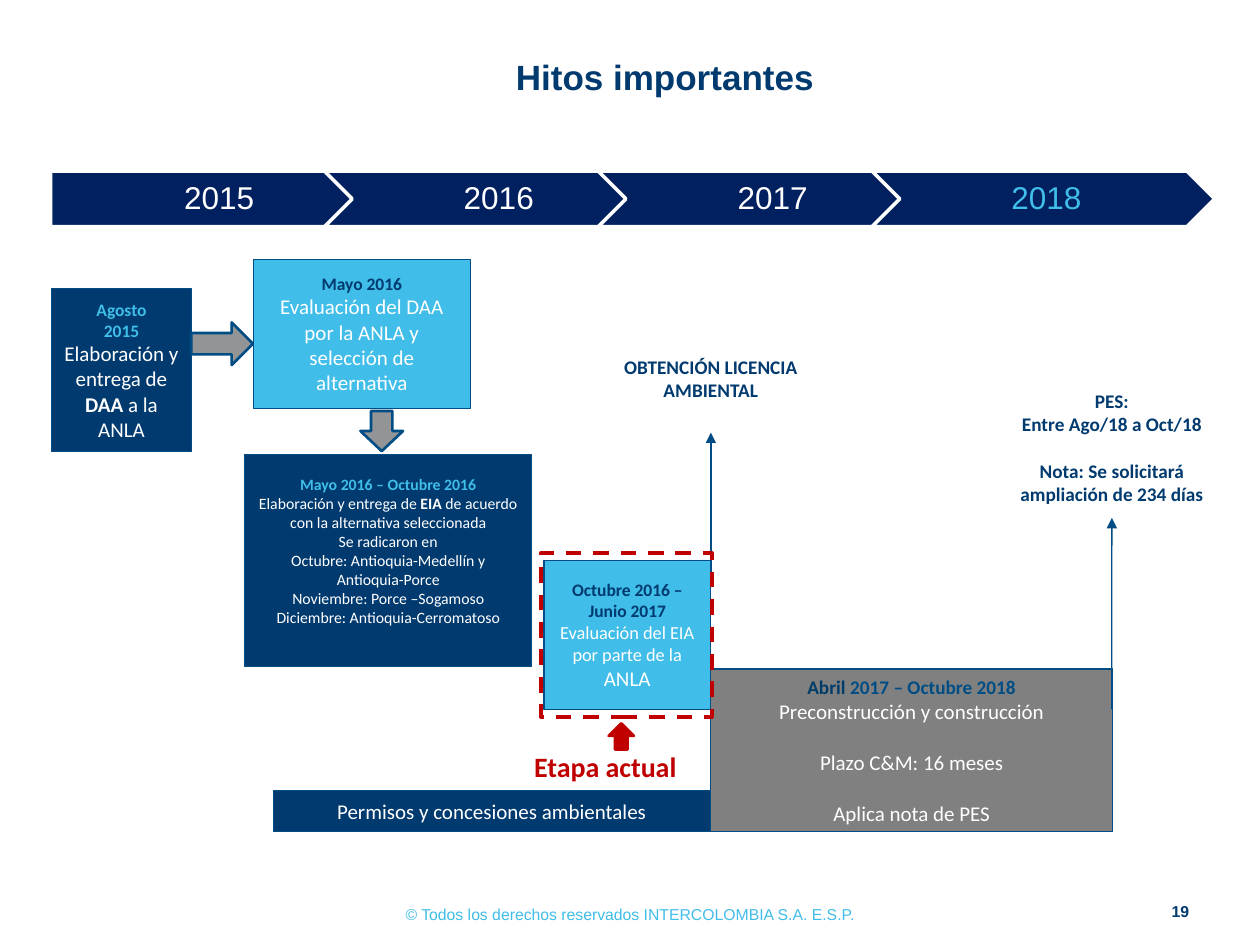
"""Build the slide with the project milestones from 2015 to 2018."""
from lxml import etree
from pptx import Presentation
from pptx import util as u
from pptx.dml.color import RGBColor
from pptx.enum import dml, shapes, text
from pptx.oxml.ns import qn

rgb = RGBColor.from_string
G = shapes.MSO_SHAPE
NAVY, SKY, BLUE, RED = "003A6F", "40BDE8", "004D86", "C00000"
WHITE, GRAY, DARK, ARROW = "FFFFFF", "808080", "002060", "939495"

prs = Presentation()
prs.slide_width, prs.slide_height = u.Cm(25.4), u.Cm(19.05)
s = prs.slides.add_slide(prs.slide_layouts[6])


def box(x, y, w, h, kind=None, fill=None, line=BLUE, width=0.75):
    """Add a shape, or a text box when no kind is given."""
    at = [u.Cm(v) for v in (x, y, w, h)]
    if kind is None:
        sp = s.shapes.add_textbox(*at)
    else:
        sp = s.shapes.add_shape(kind, *at)
        sp.shadow.inherit = False
        if fill:
            sp.fill.solid()
            sp.fill.fore_color.rgb = rgb(fill)
        else:
            sp.fill.background()
        sp.line.color.rgb = rgb(line)
        sp.line.width = u.Pt(width)
        sp.text_frame.vertical_anchor = text.MSO_ANCHOR.MIDDLE
    sp.text_frame.word_wrap = True
    return sp


def write(sp, words, size, color, bold=False, font="Calibri", before=0, same=False,
          align=text.PP_ALIGN.CENTER):
    """Add a paragraph, or continue the last one when same is set."""
    tf = sp.text_frame
    p = tf.paragraphs[-1]
    if p.runs and not same:
        p = tf.add_paragraph()
    p.alignment = align
    if before:
        p.space_before = u.Pt(before)
    r = p.add_run()
    r.text = words
    r.font.name, r.font.size, r.font.bold = font, u.Pt(size), bold
    r.font.color.rgb = rgb(color)


title = box(4.39, 0.86, 18.03, 1.37)
title.text_frame.vertical_anchor = text.MSO_ANCHOR.MIDDLE
write(title, "Hitos importantes", 20, NAVY, True, "Arial")

footer = box(6.91, 18.11, 11.58, 0.64)
write(footer, "© Todos los derechos reservados INTERCOLOMBIA S.A. E.S.P.", 9, SKY, font="Arial")

number = box(23.16, 18.03, 1.02, 0.66)
number.text_frame.vertical_anchor = text.MSO_ANCHOR.BOTTOM
number.text_frame.margin_right = 0
write(number, "19", 9, NAVY, True, "Arial")

for i, year in enumerate(("2015", "2016", "2017", "2018")):
    kind = G.CHEVRON if i else G.PENTAGON
    sp = box(1.02 + 5.52 * i, 3.45, 6.91, 1.12, kind, DARK, WHITE, 2)
    sp.text_frame.margin_left = u.Cm(0.2 if i else 0.25)
    sp.text_frame.margin_right = u.Cm(0.08)
    write(sp, year, 18, SKY if year == "2018" else WHITE, font="Arial")
    sp.text_frame.paragraphs[0].line_spacing = 0.9

daa = box(1.04, 5.82, 2.82, 3.28, G.RECTANGLE, NAVY)
write(daa, "Agosto", 10, SKY, True)
write(daa, "2015", 10, SKY, True)
write(daa, "Elaboración y entrega de ", 12, WHITE)
write(daa, "DAA ", 12, WHITE, True, same=True)
write(daa, "a la ANLA", 12, WHITE, same=True)

eia = box(4.93, 9.17, 5.79, 4.27, G.RECTANGLE, NAVY)
eia.text_frame.margin_bottom = u.Cm(0.52)
write(eia, "Mayo 2016 – Octubre 2016", 9, SKY, True)
write(eia, "Elaboración y entrega de ", 9, WHITE)
write(eia, "EIA", 9, WHITE, True, same=True)
write(eia, " de acuerdo con la alternativa seleccionada", 9, WHITE, same=True)
for words in ("Se radicaron en", "Octubre: Antioquia-Medellín y Antioquia-Porce",
              "Noviembre: Porce –Sogamoso", "Diciembre: Antioquia-Cerromatoso"):
    write(eia, words, 9, WHITE)

review = box(10.97, 11.3, 3.35, 3, G.RECTANGLE, SKY)
write(review, "Octubre 2016 – Junio 2017", 10, NAVY, True)
write(review, "Evaluación del EIA por parte de la ", 10.5, WHITE)
write(review, "ANLA", 12, WHITE, same=True)

licence = box(12.02, 7.04, 4.62, 1.68)
write(licence, "OBTENCIÓN LICENCIA AMBIENTAL", 11, NAVY, True)

works = box(14.33, 13.49, 8.1, 3.28, G.RECTANGLE, GRAY)
write(works, "Abril ", 11, "003C69", True)
write(works, "2017 – Octubre 2018", 11, BLUE, True, same=True)
write(works, "Preconstrucción y construcción", 12, WHITE)
write(works, "Plazo C&M: 16 meses", 12, WHITE, before=14.5)
write(works, "Aplica nota de PES", 12, WHITE, before=14.5)

pes = box(19.99, 7.72, 4.85, 2.72)
write(pes, "PES:", 11, NAVY, True)
write(pes, "Entre Ago/18 a Oct/18", 11, NAVY, True)
write(pes, "Nota: Se solicitará ampliación de 234 días", 11, NAVY, True, before=13.5)

for target, x, y in ((licence, 14.33, 11.71), (pes, 22.41, 14.3)):
    c = s.shapes.add_connector(shapes.MSO_CONNECTOR.STRAIGHT, u.Cm(x), u.Cm(y), u.Cm(x), u.Cm(9))
    c.end_connect(target, 2)
    c.line.color.rgb = rgb(BLUE)
    c.line.width = u.Pt(0.75)
    etree.SubElement(c.line._get_or_add_ln(), qn("a:tailEnd"), type="triangle")
    etree.SubElement(c._element.spPr, qn("a:effectLst"))

frame = box(10.9, 11.15, 3.45, 3.3, G.RECTANGLE, line=RED, width=2.25)
frame.line.dash_style = dml.MSO_LINE.DASH
box(12.27, 14.58, 0.51, 0.53, G.UP_ARROW, RED, RED, 1.5)
stage = box(10.52, 14.99, 3.91, 0.94)
write(stage, "Etapa actual", 16, RED, True, align=text.PP_ALIGN.LEFT)

permits = box(5.51, 15.93, 8.81, 0.84, G.RECTANGLE, NAVY)
write(permits, "Permisos y concesiones ambientales", 12, WHITE)

box(3.86, 6.5, 1.24, 0.86, G.RIGHT_ARROW, ARROW, width=1.5)
choice = box(5.11, 5.23, 4.37, 3, G.RECTANGLE, SKY)
write(choice, "Mayo 2016", 10, NAVY, True)
write(choice, "Evaluación del DAA por la ANLA y selección de alternativa", 12, WHITE)
down = box(7.29, 8.26, 0.81, 0.86, G.RIGHT_ARROW, ARROW, width=1.5)
down.rotation = 90

prs.save("out.pptx")
